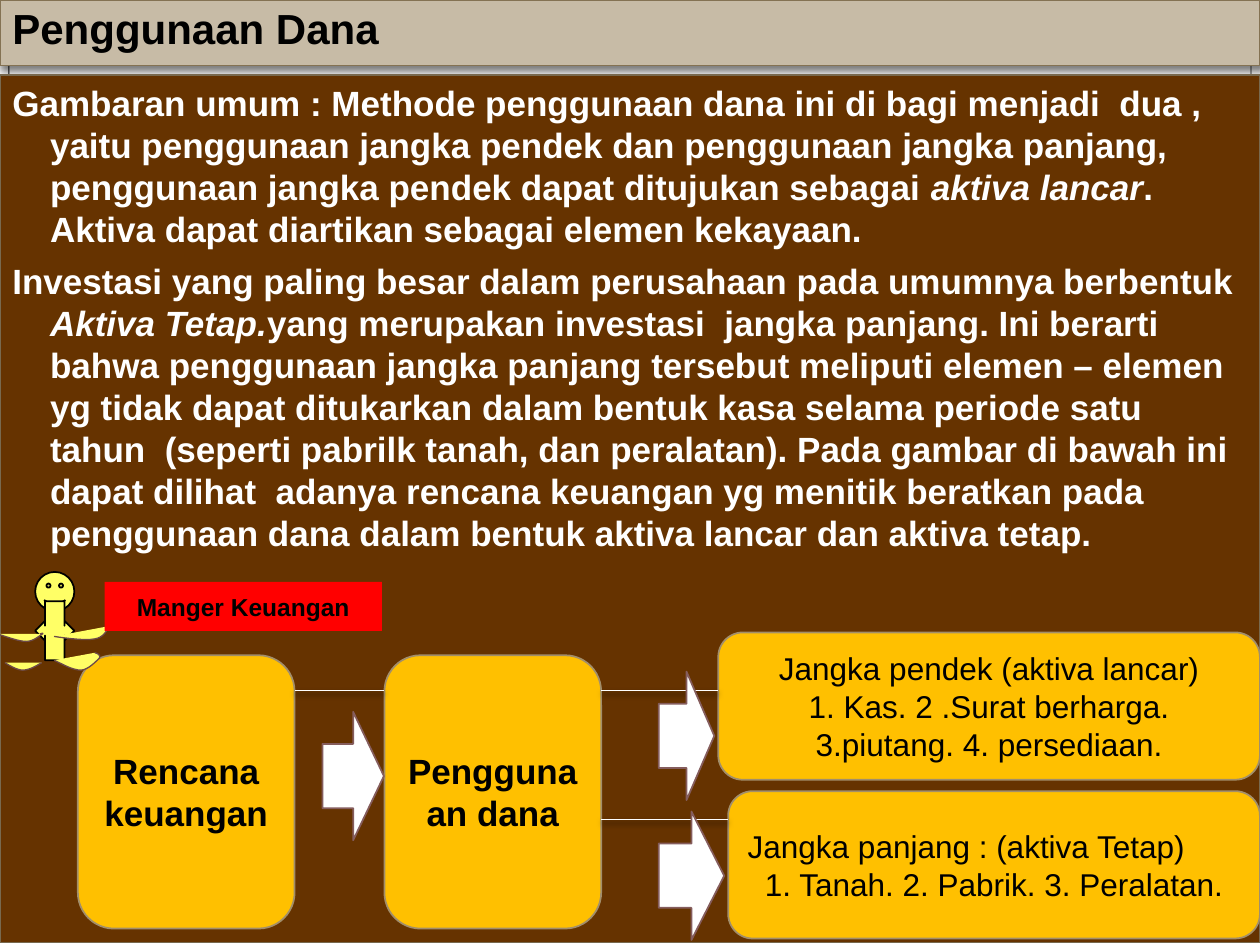
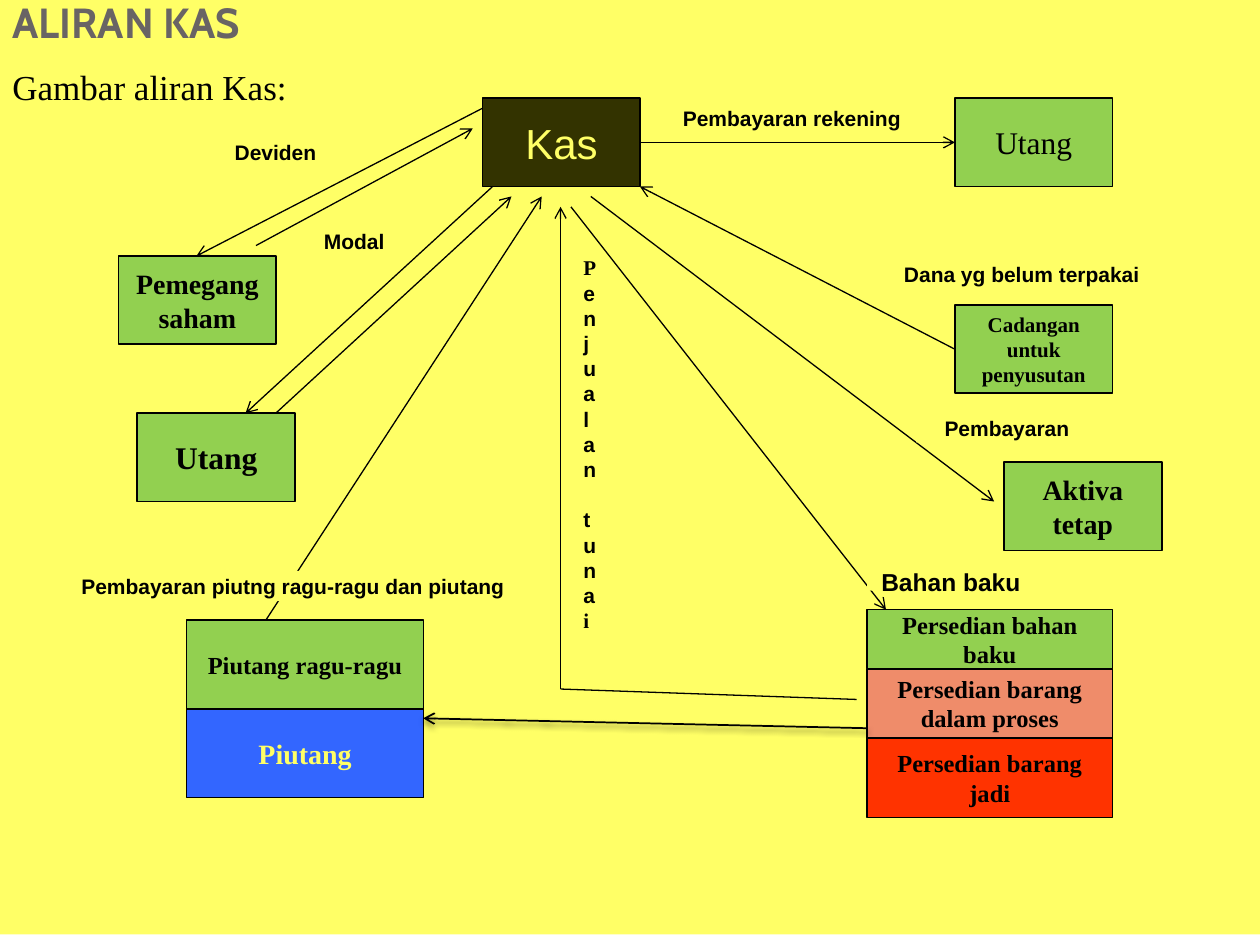
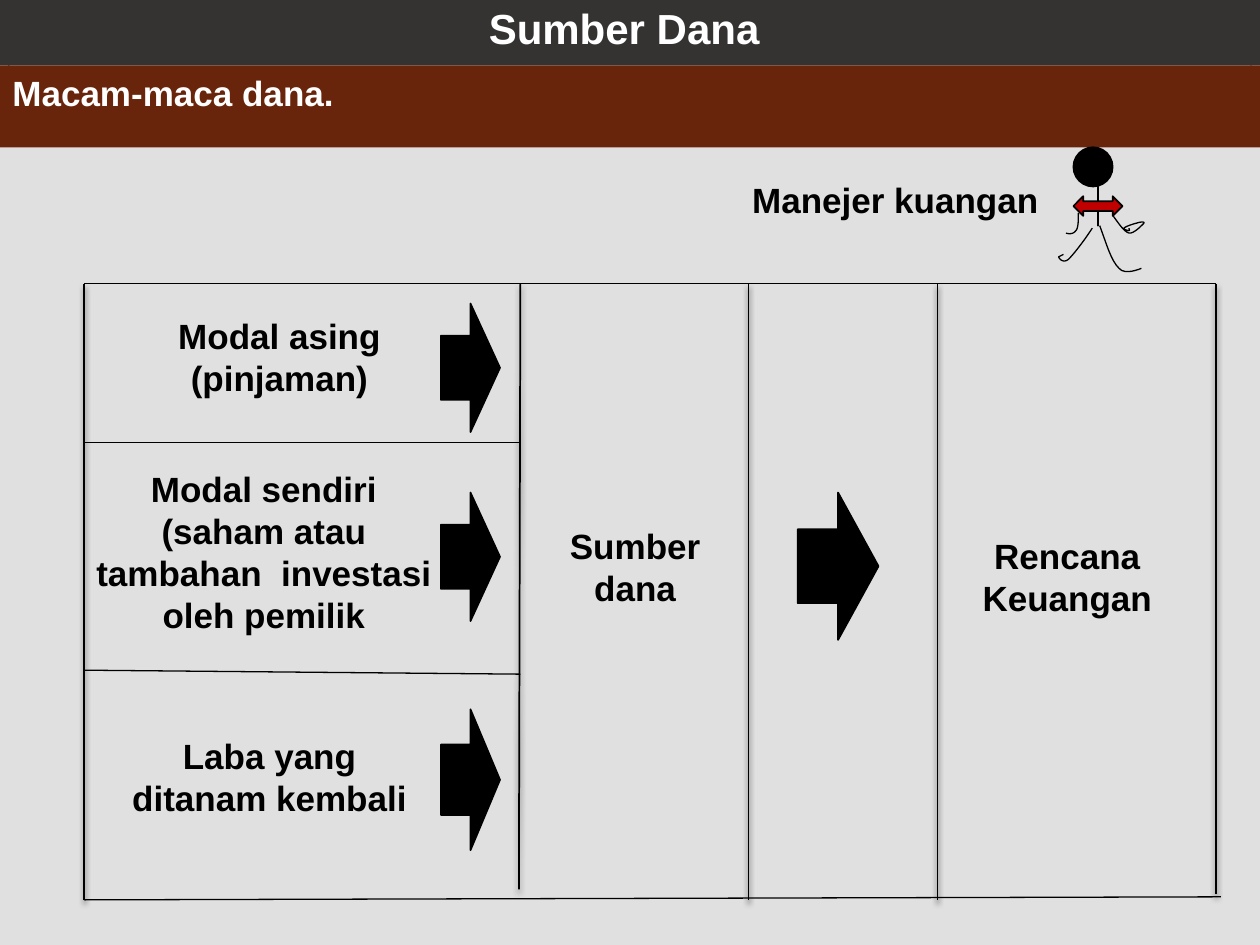
from lxml import etree
from pptx import Presentation
from pptx.dml.color import RGBColor
from pptx.enum.shapes import MSO_CONNECTOR, MSO_SHAPE
from pptx.enum.text import MSO_ANCHOR, MSO_AUTO_SIZE, PP_ALIGN
from pptx.oxml.ns import qn
from pptx.util import Cm, Pt

RECT, ROUND = MSO_SHAPE.RECTANGLE, MSO_SHAPE.ROUNDED_RECTANGLE
ARROW, SMILEY = MSO_SHAPE.RIGHT_ARROW, MSO_SHAPE.SMILEY_FACE
CALLOUT = MSO_SHAPE.LEFT_RIGHT_ARROW_CALLOUT
LEFT, CENTER = PP_ALIGN.LEFT, PP_ALIGN.CENTER
TOP, MIDDLE, BOTTOM = MSO_ANCHOR.TOP, MSO_ANCHOR.MIDDLE, MSO_ANCHOR.BOTTOM

ARIAL, TIMES, CABIN = "Arial", "Times New Roman", "Cabin"
BLACK, WHITE, RED = "000000", "FFFFFF", "FF0000"
YELLOW, GREEN, AMBER, GREY = "FFFF66", "92D050", "FFC000", "E1E0E0"
WIDTH, HEIGHT = 25.4, 19.05


# ---- Shared elements ----
def rgb(color):
    return RGBColor.from_string(color)


def add_effects(spPr, shadow):
    """Replace the theme shadow by a soft one, or by none."""
    for old in spPr.findall(qn("a:effectLst")):
        spPr.remove(old)
    effects = etree.SubElement(spPr, qn("a:effectLst"))
    if shadow:
        outer = etree.SubElement(effects, qn("a:outerShdw"), blurRad=str(Pt(3)),
                                 dist=str(Pt(2)), dir="5400000", rotWithShape="0")
        clr = etree.SubElement(outer, qn("a:srgbClr"), val=BLACK)
        etree.SubElement(clr, qn("a:alpha"), val="50000")


def paint(sp, fill=None, line=None, weight=1.0, shadow=False):
    if fill:
        sp.fill.solid()
        sp.fill.fore_color.rgb = rgb(fill)
    else:
        sp.fill.background()
    if line:
        sp.line.color.rgb = rgb(line)
        sp.line.width = Pt(weight)
    else:
        sp.line.fill.background()
    add_effects(sp._element.spPr, shadow)


def place(sp, x, y, w, h):
    sp.left, sp.top, sp.width, sp.height = Cm(x), Cm(y), Cm(w), Cm(h)


def set_font(font, name, size, color, bold):
    font.name, font.size, font.bold = name, Pt(size), bold
    font.color.rgb = rgb(color)


def write(sp, paragraphs, size, color=BLACK, font=ARIAL, bold=True,
          align=CENTER, anchor=MIDDLE):
    """Each paragraph is a list of (text, run font settings)."""
    tf = sp.text_frame
    tf.word_wrap = True
    tf.auto_size = MSO_AUTO_SIZE.NONE
    tf.vertical_anchor = anchor
    for i, runs in enumerate(paragraphs):
        p = tf.add_paragraph() if i else tf.paragraphs[0]
        p.alignment = align
        set_font(p.font, font, size, color, bold)
        for text, settings in runs:
            r = p.add_run()
            r.text = text
            set_font(r.font, font, size, color, bold)
            for key, value in settings.items():
                setattr(r.font, key, value)
    return tf


def add_figure(s, kind, x, y, w, h, fill, line=None, weight=1.0, adj=()):
    sp = s.shapes.add_shape(kind, Cm(x), Cm(y), Cm(w), Cm(h))
    for i, value in enumerate(adj):
        sp.adjustments[i] = value
    paint(sp, fill, line, weight)
    return sp


def add_box(s, text, x, y, w, h, fill, size, line=None, kind=RECT, **style):
    sp = add_figure(s, kind, x, y, w, h, fill, line)
    write(sp, [[(text, {})]], size, **style)
    return sp


def add_line(s, x1, y1, x2, y2, color=BLACK, weight=0.75, arrow=False, shadow=False):
    line = s.shapes.add_connector(MSO_CONNECTOR.STRAIGHT, Cm(x1), Cm(y1), Cm(x2), Cm(y2))
    line.line.color.rgb = rgb(color)
    line.line.width = Pt(weight)
    if arrow:
        etree.SubElement(line.line._get_or_add_ln(), qn("a:tailEnd"), type="arrow")
    add_effects(line._element.spPr, shadow)


def add_curve(s, start, segments, fill=None, line=BLACK, steps=8):
    """Draw cubic curves, each given by two control points and an end."""
    points, p0 = [], start
    for x1, y1, x2, y2, x3, y3 in segments:
        for k in range(1, steps + 1):
            t = k / steps
            weights = (1 - t) ** 3, 3 * t * (1 - t) ** 2, 3 * t * t * (1 - t), t ** 3
            x = sum(a * b for a, b in zip(weights, (p0[0], x1, x2, x3)))
            y = sum(a * b for a, b in zip(weights, (p0[1], y1, y2, y3)))
            points.append((Cm(x), Cm(y)))
        p0 = (x3, y3)
    fb = s.shapes.build_freeform(Cm(start[0]), Cm(start[1]))
    fb.add_line_segments(points, close=False)
    paint(fb.convert_to_shape(), fill, line, 0.75)


def add_slide(prs, title, y, h, fill, color=BLACK, font=ARIAL, align=LEFT,
              line=None, shadow=False):
    """Title-only slide with a rounded frame behind a title band."""
    s = prs.slides.add_slide(prs.slide_layouts[5])
    frame = add_figure(s, ROUND, 0.18, 0.2, 25.04, 18.59, WHITE, BLACK, 0.5, [0.05])
    band = s.shapes.title
    band._element.addprevious(frame._element)
    place(band, 0, y, WIDTH, h)
    paint(band, fill, line, 0.75, shadow)
    tf = write(band, [[(title, {})]], 24, color, font, align=align, anchor=BOTTOM)
    tf.margin_left = tf.margin_right = tf.margin_bottom = Cm(0.25)
    tf.margin_top = Cm(0.13)
    return s


def add_body(s, paragraphs, y, h, fill, line=None, **style):
    sp = add_figure(s, RECT, 0, y, WIDTH, h, fill, line)
    tf = write(sp, paragraphs, 20, align=LEFT, anchor=TOP, **style)
    for p in tf.paragraphs:
        p.space_before = Pt(5.8)
        pPr = p._p.get_or_add_pPr()
        pPr.set("marL", str(Cm(0.76)))
        pPr.set("indent", str(-Cm(0.76)))


# ---- Slide 1: use of funds ----
def add_use_of_funds(prs):
    s = add_slide(prs, "Penggunaan Dana", 0, 1.32, "C7BBA6", line="847253", shadow=True)
    italic = {"italic": True}
    add_body(s, [
        [("Gambaran umum : Methode penggunaan dana ini di bagi menjadi  dua , yaitu "
          "penggunaan jangka pendek dan penggunaan jangka panjang, penggunaan jangka "
          "pendek dapat ditujukan sebagai ", {}),
         ("aktiva lancar", italic),
         (". Aktiva dapat diartikan sebagai elemen kekayaan.", {})],
        [("Investasi yang paling besar dalam perusahaan pada umumnya berbentuk ", {}),
         ("Aktiva Tetap.", italic),
         ("yang merupakan investasi  jangka panjang. Ini berarti bahwa penggunaan jangka "
          "panjang tersebut meliputi elemen – elemen yg tidak dapat ditukarkan dalam "
          "bentuk kasa selama periode satu tahun  (seperti pabrilk tanah, dan peralatan). "
          "Pada gambar di bawah ini dapat dilihat  adanya rencana keuangan yg menitik "
          "beratkan pada penggunaan dana dalam bentuk aktiva lancar dan aktiva tetap.", {})],
    ], 1.52, 17.48, "663300", "78694E", color=WHITE)

    # Plan, use and the two terms
    edge = "A28E6A"
    for text, x in (("Rencana keuangan", 1.57), ("Penggunaan dana", 7.75)):
        add_box(s, text, x, 13.21, 4.37, 5.51, AMBER, 20, edge, ROUND)
    long_term = add_figure(s, ROUND, 14.68, 15.95, 10.72, 2.97, AMBER, edge)
    tf = write(long_term, [[("Jangka panjang : (aktiva Tetap)", {})],
                           [("1. Tanah. 2. Pabrik. 3. Peralatan.", {})]], 18, bold=False)
    tf.paragraphs[0].alignment = LEFT
    short_term = add_figure(s, ROUND, 14.48, 12.75, 10.92, 2.97, AMBER, edge)
    write(short_term, [[("Jangka pendek (aktiva lancar)", {})],
                       [("1. Kas. 2 .Surat berharga. 3.piutang. 4. persediaan.", {})]],
          18, bold=False)
    for x1, x2, y in ((5.94, 7.75, 13.92), (12.12, 14.48, 13.92), (12.12, 14.68, 16.52)):
        add_line(s, x1, y, x2, y, WHITE, 1, shadow=True)
    for x, y, w in ((6.5, 14.35, 1.24), (13.28, 16.36, 1.32), (13.28, 13.54, 1.12)):
        add_figure(s, ARROW, x, y, w, 2.59, WHITE, "855D5D")

    # Finance manager
    add_figure(s, SMILEY, 0.71, 11.53, 0.79, 0.79, YELLOW, BLACK)
    add_figure(s, CALLOUT, 0.71, 12.12, 0.79, 1.19, YELLOW, BLACK, adj=[0.25, 0.25, 0.25, 0.5])
    limbs = [
        ((2.21, 12.62), [(2.13, 12.75, 2.08, 12.85, 1.91, 12.88),
                         (1.7, 12.93, 1.09, 12.83, 1.09, 12.83)]),
        ((0.84, 13.36), [(0.71, 13.44, 0.58, 13.51, 0.46, 13.51),
                         (0.36, 13.51, 0.23, 13.44, 0.1, 13.36)]),
        ((-0.05, 12.78), [(0.18, 12.85, 0.38, 12.93, 0.53, 12.93),
                          (0.69, 12.93, 0.81, 12.8, 0.86, 12.78),
                          (0.89, 12.75, 0.81, 12.78, 0.81, 12.78)]),
        ((1.09, 13.31), [(1.3, 13.41, 1.47, 13.51, 1.63, 13.51),
                         (1.78, 13.51, 1.96, 13.31, 2.01, 13.26),
                         (2.03, 13.18, 1.91, 13.16, 1.91, 13.16)]),
    ]
    for start, segments in limbs:
        add_curve(s, start, segments, YELLOW, "6C4949")
    add_box(s, "Manger Keuangan", 2.11, 11.73, 5.59, 0.99, RED, 14)


# ---- Slide 2: cash flow ----
def add_stack(s, x, y, w, layers):
    for text, h, fill, size, color in layers:
        add_box(s, text, x, y, w, h, fill, size, BLACK, font=TIMES, color=color)
        y += h


def add_cash_flow(prs):
    s = add_slide(prs, "ALIRAN KAS", 0, 1.19, YELLOW, "696464", CABIN)
    add_body(s, [[("Gambar aliran Kas:", {})]], 1.19, 17.65, YELLOW, font=TIMES, bold=False)

    # Cash and its counterparts
    box_w, box_h = 3.18, 1.78
    add_box(s, "Kas", 9.73, 1.98, box_w, box_h, "333300", 24, BLACK, color=YELLOW, bold=False)
    for text, x, y, size, bold in (
            ("Utang", 19.25, 1.98, 18, False),
            ("Aktiva tetap", 20.24, 9.32, 16, True),
            ("Cadangan untuk penyusutan", 19.25, 6.15, 12, True),
            ("Utang", 2.77, 8.33, 18, True),
            ("Pemegang saham", 2.39, 5.16, 16, True)):
        add_box(s, text, x, y, box_w, box_h, GREEN, size, BLACK, font=TIMES, bold=bold)
    add_stack(s, 3.76, 12.5, 4.78, [
        ("Piutang ragu-ragu", 1.79, GREEN, 14, BLACK),
        ("Piutang", 1.79, "3366FF", 16, YELLOW)])
    add_stack(s, 17.48, 12.29, 4.95, [
        ("Persedian bahan baku", 1.19, GREEN, 14, BLACK),
        ("Persedian barang dalam proses", 1.4, "EF8C6A", 14, BLACK),
        ("Persedian barang jadi", 1.6, "FF3300", 14, BLACK)])

    # Flows
    for ends in ((9.73, 2.18, 3.96, 5.16), (5.16, 4.95, 9.53, 2.59),
                 (5.56, 8.33, 10.31, 3.96), (9.93, 3.76, 4.95, 8.33),
                 (5.36, 12.5, 10.92, 3.96), (12.9, 2.87, 19.25, 2.87),
                 (11.51, 4.17, 17.86, 12.29), (11.91, 3.96, 20.04, 10.11),
                 (19.25, 7.04, 12.9, 3.76), (11.3, 13.89, 11.3, 4.17)):
        add_line(s, *ends, arrow=True)
    add_line(s, 11.3, 13.89, 17.27, 14.1)
    add_line(s, 17.48, 14.68, 8.53, 14.48, weight=1, arrow=True, shadow=True)

    # Flow labels
    cash_sales = add_figure(s, RECT, 11.51, 5.18, 0.58, 7.54, YELLOW)
    times = {"name": TIMES}
    write(cash_sales, [[("P", times), ("enjualan tuna", {}), ("i", times)]], 12)
    for text, x, y, w, h, size in (
            ("Pembayaran rekening", 13.49, 1.98, 4.95, 0.79, 12),
            ("Dana yg belum terpakai", 17.68, 5.13, 5.84, 0.79, 12),
            ("Pembayaran", 18.47, 8.36, 3.66, 0.56, 12),
            ("Bahan baku", 17.48, 11.53, 3.38, 0.38, 14),
            ("Pembayaran piutng ragu-ragu dan piutang", 1.3, 11.51, 9.22, 0.61, 12),
            ("Deviden", 4.17, 2.79, 2.77, 0.56, 12),
            ("Modal", 6.15, 4.57, 1.98, 0.58, 12)):
        add_box(s, text, x, y, w, h, YELLOW, size)


# ---- Slide 3: sources of funds ----
def add_sources_of_funds(prs):
    s = add_slide(prs, "Sumber Dana ", -0.08, 1.4, "353232", WHITE, align=CENTER)
    add_body(s, [[("Macam-maca dana.", {})]], 1.32, 17.73, "69240C", color=WHITE)
    add_figure(s, RECT, 0, 2.97, WIDTH, 16.08, GREY)

    # Cell texts and arrows
    for text, x, y, w, h in (
            ("Modal asing (pinjaman)", 2.36, 5.92, 6.55, 2.54),
            ("Modal sendiri (saham atau tambahan  investasi oleh pemilik", 1.55, 9.32, 7.54, 3.58),
            ("Laba yang ditanam kembali", 2.16, 14.38, 6.55, 2.54),
            ("Sumber dana", 10.9, 10.34, 3.81, 2.18),
            ("Rencana Keuangan", 19.33, 10.54, 4.37, 2.18),
            ("Manejer kuangan", 14.71, 3.53, 6.68, 0.99)):
        add_box(s, text, x, y, w, h, GREY, 20)
    for x, y, w, h in ((8.89, 6.12, 1.19, 2.59), (8.89, 9.93, 1.19, 2.59),
                       (8.89, 14.3, 1.19, 2.84), (16.08, 9.93, 1.63, 2.97)):
        add_figure(s, ARROW, x, y, w, h, BLACK, BLACK)

    # Grid
    left, top, bottom = 1.7, 5.72, 18.14
    for y1, x2, y2 in ((top, 24.51, top), (8.92, 10.49, 8.92),
                       (13.51, 10.49, 13.59), (bottom, 24.61, 18.08)):
        add_line(s, left, y1, x2, y2)
    for x1, x2, y2 in ((left, left, bottom), (10.49, 10.46, 17.93), (15.09, 15.09, bottom),
                       (18.9, 18.9, bottom), (24.51, 24.51, 18.03)):
        add_line(s, x1, top, x2, y2, weight=1, shadow=True)

    # Finance manager
    add_figure(s, SMILEY, 21.64, 2.97, 0.79, 0.79, BLACK, BLACK)
    add_figure(s, CALLOUT, 21.64, 3.76, 0.99, 0.79, "C00000", BLACK, adj=[0.25, 0.25, 0.25, 0])
    limbs = [
        ((21.74, 4.29), [(21.74, 4.45, 21.74, 4.6, 21.69, 4.65),
                         (21.64, 4.72, 21.56, 4.72, 21.49, 4.7)]),
        ((22.02, 4.6), [(21.84, 4.88, 21.64, 5.13, 21.54, 5.23),
                        (21.41, 5.33, 21.34, 5.18, 21.34, 5.18),
                        (21.34, 5.18, 21.44, 5.13, 21.44, 5.13)]),
        ((22.43, 4.34), [(22.56, 4.52, 22.66, 4.67, 22.76, 4.7),
                         (22.86, 4.72, 23.04, 4.52, 23.06, 4.5),
                         (23.09, 4.47, 22.99, 4.47, 22.91, 4.5),
                         (22.83, 4.52, 22.68, 4.57, 22.66, 4.6),
                         (22.63, 4.62, 22.73, 4.65, 22.76, 4.65),
                         (22.78, 4.65, 22.76, 4.62, 22.76, 4.6)]),
        ((22.17, 4.55), [(22.3, 4.9, 22.4, 5.26, 22.56, 5.41),
                         (22.68, 5.56, 23.01, 5.41, 23.01, 5.41)]),
    ]
    for start, segments in limbs:
        add_curve(s, start, segments)


def main():
    prs = Presentation()
    prs.slide_width, prs.slide_height = Cm(WIDTH), Cm(HEIGHT)
    add_use_of_funds(prs)
    add_cash_flow(prs)
    add_sources_of_funds(prs)
    prs.save("out.pptx")


if __name__ == "__main__":
    main()
